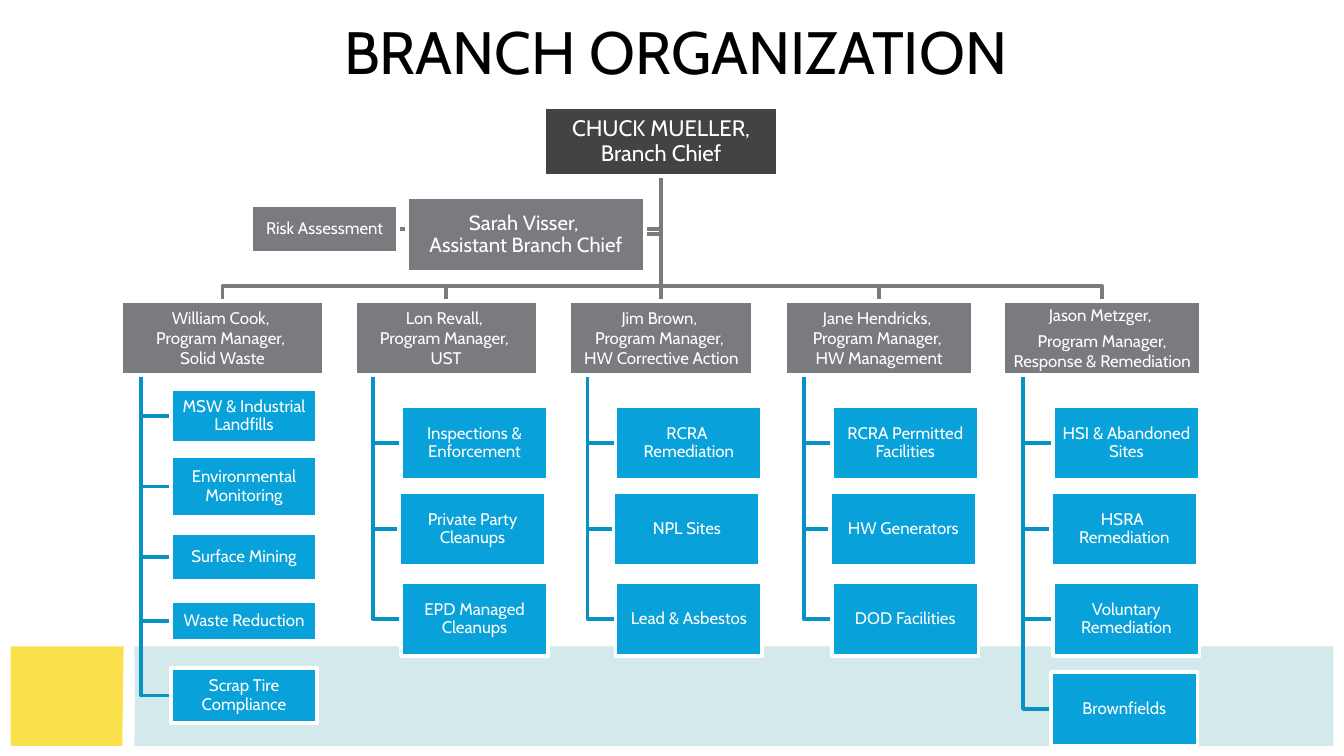
import pptx
import pptx.util
import pptx.dml.color
import pptx.enum.text
import pptx.enum.shapes
import pptx.oxml.ns
import lxml.etree

HUE = {"dark": "434342", "gray": "797B7E", "blue": "08A1D9", "stem": "0792C5",
       "sun": "FAE04B", "pale": "C8E4E8", "white": "FFFFFF", "black": "000000"}
RGB = {k: pptx.dml.color.RGBColor.from_string(v) for k, v in HUE.items()}

deck = pptx.Presentation()
deck.slide_width = pptx.util.Inches(10)
deck.slide_height = deck.slide_width * 9 // 16
slide = deck.slides.add_slide(deck.slide_layouts[6])
COL = deck.slide_width / 100
ROW = deck.slide_height / 56.25


def trace(spots, hue, closed=False):
    spots = [(round(x * COL), round(y * ROW)) for x, y in spots]
    pen = slide.shapes.build_freeform(*spots[0])
    pen.add_line_segments(spots[1:], close=closed)
    form = pen.convert_to_shape()
    form.shadow.inherit = False
    if closed:
        form.fill.solid()
        form.fill.fore_color.rgb = RGB[hue]
        form.line.fill.background()
    else:
        form.fill.background()
        form.line.color.rgb = RGB[hue]
        form.line.width = pptx.util.Pt(2)
    return form


def label(left, top, wide, high, text, hue=None, size=9, gap=0.9, ink="white"):
    area = [round(n) for n in (left * COL, top * ROW, wide * COL, high * ROW)]
    if hue:
        box = slide.shapes.add_shape(pptx.enum.shapes.MSO_SHAPE.RECTANGLE, *area)
        box.shadow.inherit = False
        box.fill.solid()
        box.fill.fore_color.rgb = RGB[hue]
        box.line.color.rgb = RGB["white"]
        box.line.width = pptx.util.Pt(2)
    else:
        box = slide.shapes.add_textbox(*area)
    frame = box.text_frame
    edge = pptx.util.Inches(0.01)
    look = {"word_wrap": True, "vertical_anchor": pptx.enum.text.MSO_ANCHOR.MIDDLE,
            "margin_left": edge, "margin_right": edge,
            "margin_top": edge, "margin_bottom": edge, "text": text}
    for key, value in look.items():
        setattr(frame, key, value)
    for para in frame.paragraphs:
        flow = {"alignment": pptx.enum.text.PP_ALIGN.CENTER, "line_spacing": gap,
                "space_after": pptx.util.Pt(3 if hue else 0)}
        for key, value in flow.items():
            setattr(para, key, value)
        for run in para.runs:
            for key, value in {"name": "Cabin", "size": pptx.util.Pt(size)}.items():
                setattr(run.font, key, value)
            run.font.color.rgb = RGB[ink]


trace([(0.8, 55.5), (0.8, 48.1), (9.2, 48.1), (9.1, 55.5)], "sun", True)
band = trace([(10, 55.5), (10.05, 51.8), (10, 48.1), (99.2, 48.1), (99.2, 55.5)],
             "pale", True)
tint = band.fill._xPr.find(".//" + pptx.oxml.ns.qn("a:srgbClr"))
lxml.etree.SubElement(tint, pptx.oxml.ns.qn("a:alpha"), val="80000")

label(9.2, 1.5, 82.2, 4.5, "BRANCH ORGANIZATION", size=32, gap=1, ink="black")

FIVE = [(28.95, 4), (33.95, 4.5), (39.7, 3.5), (44.7, 3), (49.7, 4.1)]
FOUR = [(30.2, 5.5), (36.6, 5.5), (43.3, 5.5), (50, 5.5)]
TEAMS = [
    (9, 15.1, 12.7, 0, FIVE, "William Cook, \vProgram Manager, \vSolid Waste",
     ["MSW & Industrial Landfills", "Environmental Monitoring", "Surface Mining",
      "Waste Reduction", "Scrap Tire Compliance"]),
    (26.4, 13.6, 29.85, 0.15, FOUR, "Lon Revall, \vProgram Manager, \vUST",
     ["Inspections & Enforcement", "Private Party Cleanups", "EPD Managed Cleanups"]),
    (42.35, 13.7, 45.8, 0.15, FOUR,
     "Jim Brown, \vProgram Manager, \vHW Corrective Action",
     ["RCRA \vRemediation", "NPL Sites", "Lead & Asbestos"]),
    (58.4, 14, 61.9, 0.15, FOUR, "Jane Hendricks, \vProgram Manager, \vHW Management",
     ["RCRA Permitted Facilities", "HW Generators", "DOD Facilities"]),
    (74.65, 14.7, 78.35, 0.15, FOUR,
     "Jason Metzger, \nProgram Manager, Response & Remediation",
     ["HSI & Abandoned Sites", "HSRA \vRemediation", "Voluntary Remediation",
      "Brownfields"]),
]
TRUNK, START, BAR, HEAD, DEEP, TASK = 49.2, 13.1, 21.3, 22.4, 5.5, 10.9

for end, level in [(29.6, 17.05), (48, 17.4)]:
    trace([(TRUNK, START), (TRUNK, level), (end, level)], "gray")

for left, wide, inset, shift, rows, boss, tasks in TEAMS:
    mid = left + wide / 2
    stem = left + wide / 10
    trace([(TRUNK, START), (TRUNK, BAR), (mid, BAR), (mid, HEAD)], "gray")
    spots = [(inset - shift * (i % 2), *row) for i, row in enumerate(rows)]
    for (x, y, high), task in reversed(list(zip(spots, tasks))):
        level = y + high / 2
        trace([(stem, HEAD + DEEP), (stem, level), (x, level)], "stem")
    label(left, HEAD, wide, DEEP, boss, "gray", gap=1)
    for (x, y, high), task in zip(spots, tasks):
        label(x, y, TASK, high, task, "blue")

label(40.5, 8, 17.4, 5.1, "CHUCK MUELLER, Branch Chief", "dark", 12)
label(30.3, 14.7, 17.7, DEEP, "Sarah Visser, \vAssistant Branch Chief", "gray", 11)
label(18.7, 15.3, TASK, 3.5, "Risk Assessment", "gray")

deck.save("out.pptx")
